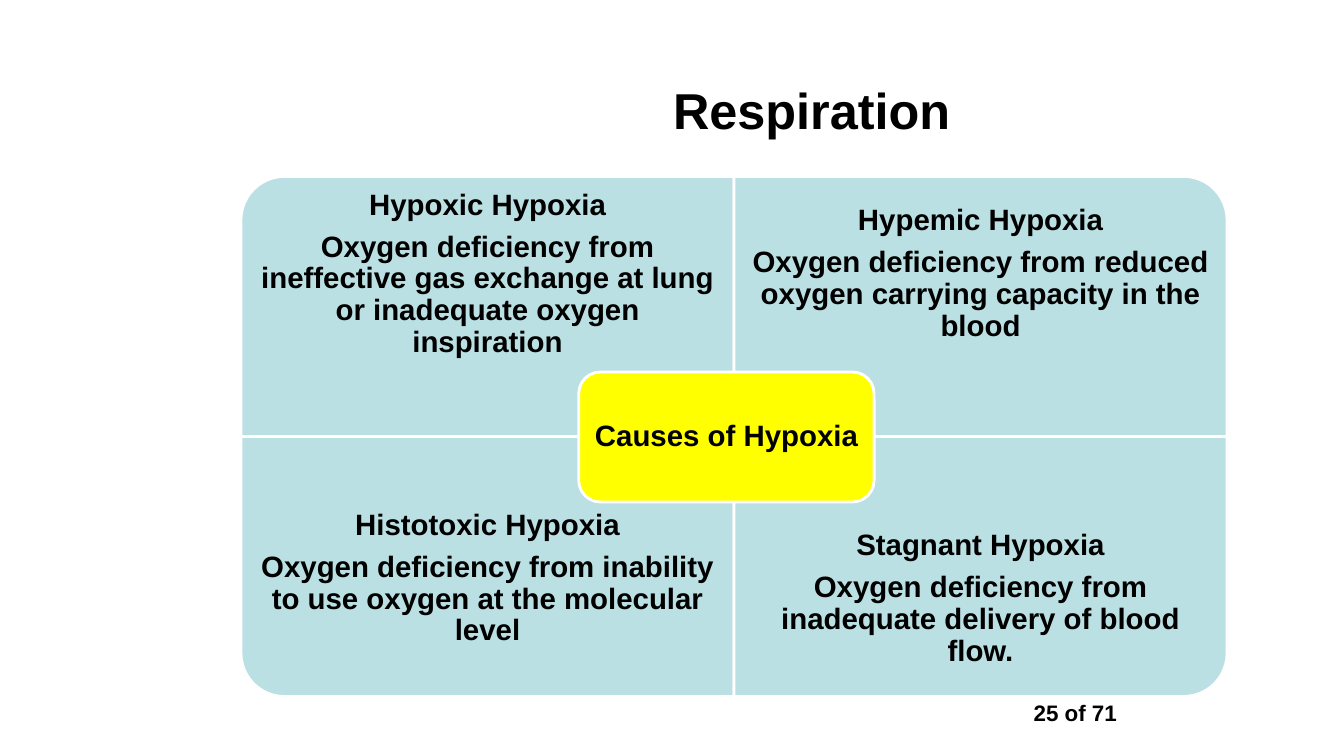
from pptx import Presentation
from pptx.dml.color import RGBColor
from pptx.enum.shapes import MSO_SHAPE
from pptx.enum.text import MSO_ANCHOR, PP_ALIGN
from pptx.util import Inches, Pt

BLACK = RGBColor(0x00, 0x00, 0x00)
WHITE = RGBColor(0xFF, 0xFF, 0xFF)
PALE_TEAL = RGBColor(0xBB, 0xE0, 0xE3)
YELLOW = RGBColor(0xFF, 0xFF, 0x00)

LEFT, TOP = 2.39, 1.75
QUADRANT_W, QUADRANT_H = 4.89, 2.58
CAPTION_H = 1.94

presentation = Presentation()
presentation.slide_width = Inches(13.33)
presentation.slide_height = Inches(7.5)
slide = presentation.slides.add_slide(presentation.slide_layouts[6])


def add_panel(preset, left, top, width, height, fill):
    panel = slide.shapes.add_shape(
        preset, Inches(left), Inches(top), Inches(width), Inches(height))
    panel.shadow.inherit = False
    panel.fill.solid()
    panel.fill.fore_color.rgb = fill
    panel.line.color.rgb = WHITE
    panel.line.width = Pt(2)
    return panel


def add_text(lines, left, top, width, height, size, spacing=0.9,
             anchor=MSO_ANCHOR.MIDDLE, inset=0.05, bottom_inset=None):
    box = slide.shapes.add_textbox(
        Inches(left), Inches(top), Inches(width), Inches(height))
    frame = box.text_frame
    frame.word_wrap = True
    frame.vertical_anchor = anchor
    frame.margin_left = frame.margin_right = frame.margin_top = Inches(inset)
    frame.margin_bottom = Inches(bottom_inset or inset)
    frame.text = "\n".join(lines)
    for paragraph in frame.paragraphs:
        paragraph.alignment = PP_ALIGN.CENTER
        paragraph.line_spacing = spacing
        paragraph.space_after = Pt(0.35 * size)
        format_values = {"name": "Arial", "size": Pt(size), "bold": True}
        for attribute, value in format_values.items():
            setattr(paragraph.font, attribute, value)
        paragraph.font.color.rgb = BLACK


add_text(["Respiration"], 3.44, 0.42, 9.22, 1.33, 36, spacing=1.0)

causes = [
    (0, 0, 270, 0.16, "Hypoxic Hypoxia",
     "Oxygen deficiency from ineffective gas exchange at lung or inadequate oxygen inspiration"),
    (1, 0, 0, 0.16, "Hypemic Hypoxia",
     "Oxygen deficiency from reduced oxygen carrying capacity in the blood"),
    (0, 1, 180, 0.56, "Histotoxic Hypoxia",
     "Oxygen deficiency from inability to use oxygen at the molecular level"),
    (1, 1, 90, 0.16, "Stagnant Hypoxia",
     "Oxygen deficiency from inadequate delivery of blood flow."),
]
for column, row, rotation, bottom_inset, cause, explanation in causes:
    left = LEFT + column * QUADRANT_W
    top = TOP + row * QUADRANT_H
    width, height = QUADRANT_W, QUADRANT_H
    if rotation in (90, 270):
        width, height = height, width
    quadrant = add_panel(
        MSO_SHAPE.ROUND_1_RECTANGLE,
        left + (QUADRANT_W - width) / 2, top + (QUADRANT_H - height) / 2,
        width, height, PALE_TEAL)
    quadrant.rotation = rotation
    caption_top = top + row * (QUADRANT_H - CAPTION_H)
    add_text([cause, explanation], left, caption_top, QUADRANT_W, CAPTION_H, 21,
             inset=0.16, bottom_inset=bottom_inset)

add_panel(MSO_SHAPE.ROUNDED_RECTANGLE, 5.74, 3.69, 2.93, 1.29, YELLOW)
add_text(["Causes of Hypoxia"], 5.8, 3.75, 2.81, 1.17, 21, inset=0.09)

add_text(["25 of 71"], 10.08, 6.92, 1.17, 0.34, 16, anchor=MSO_ANCHOR.TOP)

presentation.save("out.pptx")
